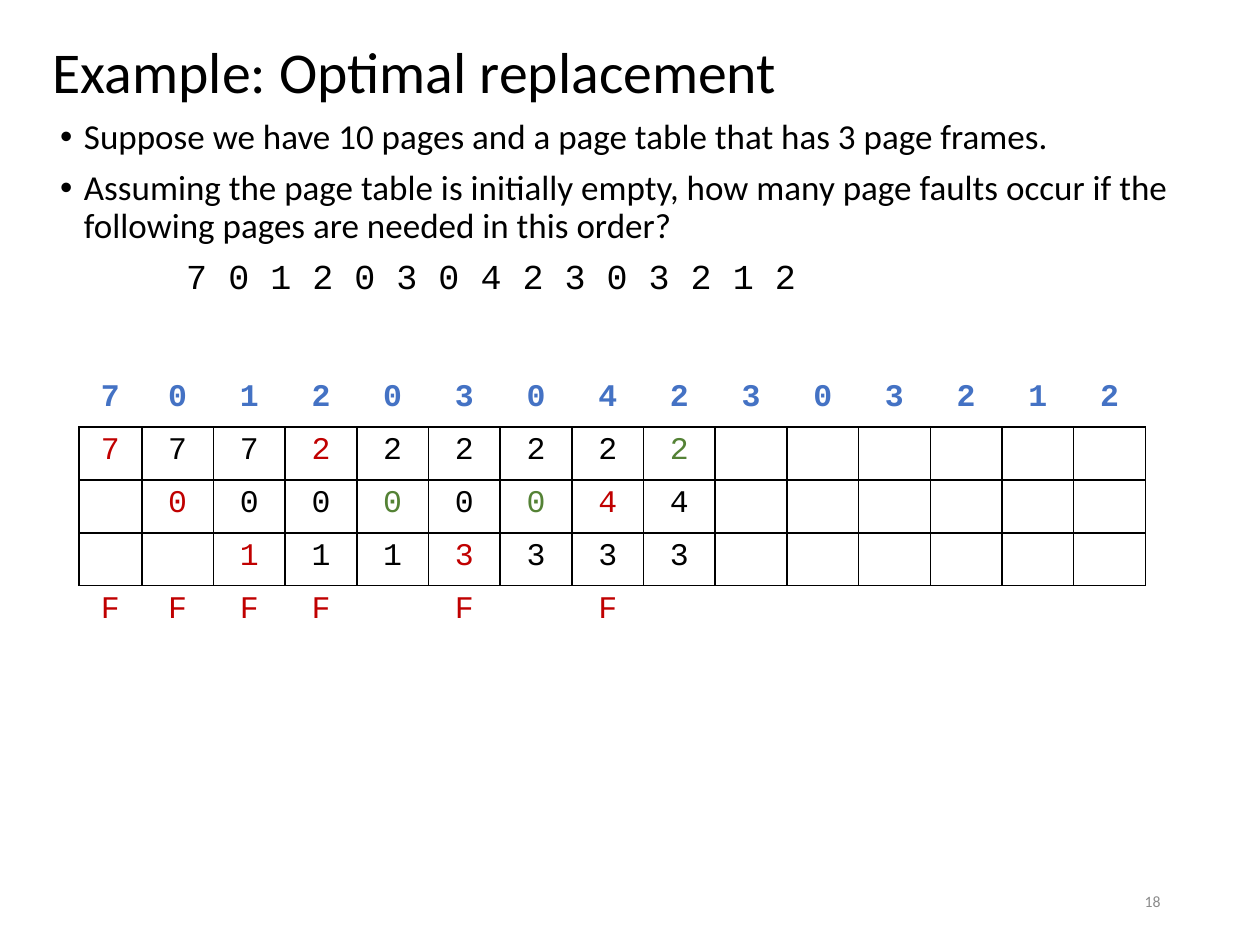
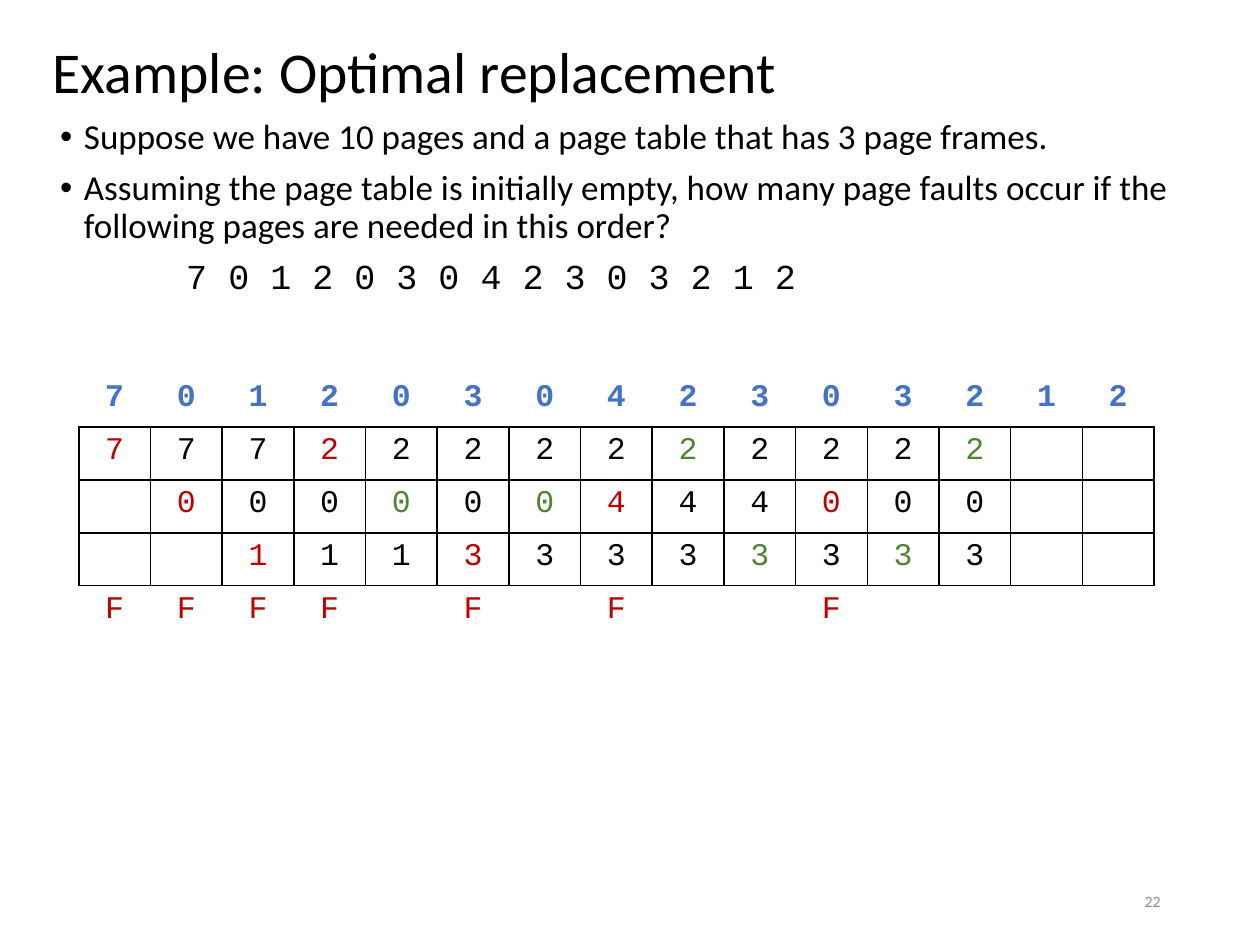
from dataclasses import dataclass

from lxml.etree import SubElement
from pptx import Presentation
from pptx.dml.color import RGBColor as Rgb
from pptx.enum.text import MSO_ANCHOR as Anchor, PP_ALIGN as Align
from pptx.oxml import parse_xml
from pptx.oxml.ns import nsdecls, qn
from pptx.util import Inches, Pt


@dataclass(frozen=True)
class Theme:
    """Fonts, colours and type sizes shared by all slides."""
    sans: str = "Calibri"
    mono: str = "Courier New"
    black: str = "000000"
    request: str = "4472C4"
    fault: str = "C00000"
    hit: str = "548235"
    grey: str = "8C8C8C"
    title: int = 33
    body: int = 20
    cell: int = 18
    footer: int = 9
    border: int = 1


T = Theme()
WIDTH, HEIGHT = Inches(10), Inches(7.5)
GRID_COLS, GRID_ROWS = 100, 75
COL, ROW = WIDTH / GRID_COLS, HEIGHT / GRID_ROWS

TITLE_BOX = (3.2, 1, 93.5, 9.9)
BODY_BOX = (3.8, 9, 93, 65)
NUMBER_BOX = (70.6, 69.5, 22.5, 4)
TABLE_ORIGIN = (6.25, 29.7)
CELL_W, CELL_H = 5.69, 4.2
BULLET_INDENT, PAGES_INDENT = 1.88, 10

PLAIN_TABLE = "{2D5ABB26-0587-4C30-8999-92F81FD0307C}"
PAGES = "701203042303212"
FRAMES = 3
TITLE = "Example: Optimal replacement"
QUESTIONS = (
    "Suppose we have 10 pages and a page table that has 3 page frames.",
    "Assuming the page table is initially empty, how many page faults occur "
    "if the following pages are needed in this order?",
)


def place(box):
    """Turn a box in grid columns and rows into slide lengths."""
    x, y, w, h = box
    return [round(v) for v in (x * COL, y * ROW, w * COL, h * ROW)]


def assign(target, formats):
    """Set each attribute named in a dict of formats."""
    for name, value in formats.items():
        setattr(target, name, value)


def write(p, text, size, font=T.sans, color=T.black, bold=False, **formats):
    """Write one formatted run in a paragraph."""
    assign(p, formats)
    r = p.add_run()
    r.text = text
    assign(r.font, {"size": Pt(size), "name": font, "bold": bold})
    r.font.color.rgb = Rgb.from_string(color)


def add_text(s, box, anchor=Anchor.TOP):
    """Add a wrapping text box and return its frame."""
    tf = s.shapes.add_textbox(*place(box)).text_frame
    assign(tf, {"word_wrap": True, "vertical_anchor": anchor})
    return tf


def indent(p, left, bullet=False):
    """Indent a paragraph, with a hanging bullet if asked."""
    pPr = p._p.get_or_add_pPr()
    pPr.set("marL", str(round(left * COL)))
    pPr.set("indent", str(round(-left * COL) if bullet else 0))
    if bullet:
        SubElement(pPr, qn("a:buFont"), typeface="Arial")
        SubElement(pPr, qn("a:buChar"), char="•")


def add_title(s, box):
    """Add the slide title."""
    p = add_text(s, box, Anchor.MIDDLE).paragraphs[0]
    write(p, TITLE, T.title, line_spacing=0.9)


def add_number(s, box, number):
    """Add the slide number at the right of its box."""
    p = add_text(s, box, Anchor.MIDDLE).paragraphs[0]
    write(p, str(number), T.footer, color=T.grey, alignment=Align.RIGHT)


def add_body(s, box):
    """Add the bulleted question and the requested pages."""
    tf = add_text(s, box)
    spacing = {"line_spacing": 0.9, "space_before": Pt(7.5)}
    for i, question in enumerate(QUESTIONS):
        p = tf.add_paragraph() if i else tf.paragraphs[0]
        write(p, question, T.body, **spacing)
        indent(p, BULLET_INDENT, bullet=True)
    p = tf.add_paragraph()
    write(p, " ".join(PAGES), T.body, T.mono, **spacing)
    indent(p, PAGES_INDENT)


def replace_optimally(pages, frame_count):
    """Yield the frames, the touched frame and the fault flag per request."""
    frames = []
    for i, page in enumerate(pages):
        fault = page not in frames
        if fault and len(frames) < frame_count:
            frames.append(page)
        elif fault:
            later = pages[i + 1:] 
            waits = [later.find(f) if f in later else len(pages) for f in frames]
            frames[waits.index(max(waits))] = page
        yield list(frames), frames.index(page), fault


def draw_borders(cell, sides):
    """Draw solid lines on the given sides of a cell."""
    tcPr = cell._tc.get_or_add_tcPr()
    for i, side in enumerate(sides):
        tcPr.insert(i, parse_xml(
            f'<a:ln{side} {nsdecls("a")} w="{Pt(T.border)}"><a:solidFill>'
            f'<a:srgbClr val="{T.black}"/></a:solidFill></a:ln{side}>'))


def add_frame_table(s, origin, first_w, steps):
    """Add the page frame table, filled in for the first steps."""
    widths = [first_w] + [CELL_W] * (len(PAGES) - 1)
    rows = FRAMES + 2
    box = (*origin, sum(widths), rows * CELL_H)
    table = s.shapes.add_table(rows, len(PAGES), *place(box)).table
    assign(table, {"first_row": False, "horz_banding": False})
    table._tbl.tblPr.find(qn("a:tableStyleId")).text = PLAIN_TABLE
    for column, w in zip(table.columns, widths):
        column.width = round(w * COL)

    sides = ["B"] + ["LRTB"] * FRAMES + ["T"]
    for row, row_sides in enumerate(sides):
        for col in range(len(PAGES)):
            cell = table.cell(row, col)
            cell.fill.background()
            draw_borders(cell, row_sides)

    def fill(row, col, text, color, bold=False):
        """Write centred text in a cell."""
        write(table.cell(row, col).text_frame.paragraphs[0], text, T.cell,
              T.mono, color, bold, alignment=Align.CENTER)

    for col, page in enumerate(PAGES):
        fill(0, col, page, T.request, bold=True)
    history = list(replace_optimally(PAGES, FRAMES))[:steps]
    for col, (frames, touched, fault) in enumerate(history):
        accent = T.fault if fault else T.hit
        for i, page in enumerate(frames):
            fill(i + 1, col, page, accent if i == touched else T.black)
        if fault:
            fill(rows - 1, col, "F", T.fault)


def add_example(prs, number, steps, first_w=CELL_W):
    """Add one slide of the replacement example."""
    s = prs.slides.add_slide(prs.slide_layouts[6])
    add_body(s, BODY_BOX)
    add_title(s, TITLE_BOX)
    add_number(s, NUMBER_BOX, number)
    add_frame_table(s, TABLE_ORIGIN, first_w, steps)


def main():
    """Build and save the presentation."""
    prs = Presentation()
    assign(prs, {"slide_width": WIDTH, "slide_height": HEIGHT})
    add_example(prs, number=18, steps=9, first_w=5)
    add_example(prs, number=22, steps=13)
    prs.save("out.pptx")


if __name__ == "__main__":
    main()
